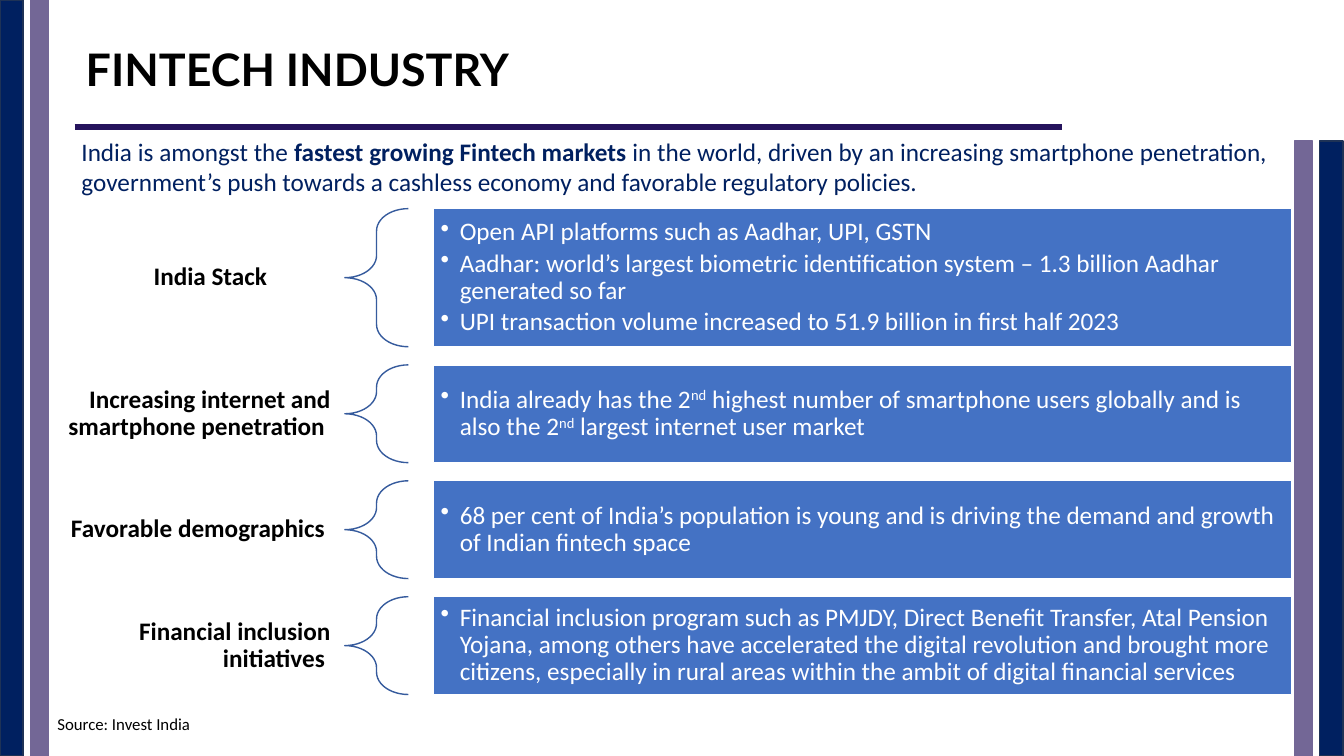
from dataclasses import dataclass

from lxml import etree
from pptx import Presentation
from pptx.dml.color import RGBColor
from pptx.enum.shapes import MSO_CONNECTOR, MSO_SHAPE
from pptx.enum.text import MSO_ANCHOR, PP_ALIGN
from pptx.oxml.ns import qn
from pptx.shapes.base import BaseShape
from pptx.slide import Slide
from pptx.text.text import TextFrame, _Paragraph
from pptx.util import Pt

RECTANGLE = MSO_SHAPE.RECTANGLE
LEFT_BRACE = MSO_SHAPE.LEFT_BRACE
STRAIGHT = MSO_CONNECTOR.STRAIGHT
LEFT, RIGHT, JUSTIFY = PP_ALIGN.LEFT, PP_ALIGN.RIGHT, PP_ALIGN.JUSTIFY
TOP, MIDDLE = MSO_ANCHOR.TOP, MSO_ANCHOR.MIDDLE

EMU_PER_PX = 9144
COLORS = {
    "navy": "002060",
    "navy_edge": "1E3256",
    "purple": "736796",
    "rule": "26145D",
    "panel": "4472C4",
    "brace": "365B9D",
    "white": "FFFFFF",
    "black": "000000",
}
FIRST_ROW_TOP = 207
ROW_GAP = 18
LABEL_HEIGHT = 97


@dataclass(frozen=True)
class Span:
    text: str
    bold: bool = False
    superscript: bool = False


@dataclass(frozen=True)
class Bar:
    left: int
    top: int
    width: int
    height: int
    fill: str
    edge: str


@dataclass(frozen=True)
class Driver:
    label: str
    bullets: list[list[Span]]
    height: int = 97
    label_inset: int = 14


BARS = [
    Bar(0, 0, 23, 750, "navy", "navy_edge"),
    Bar(30, 0, 18, 750, "purple", "purple"),
    Bar(1309, 140, 23, 610, "navy", "navy_edge"),
    Bar(1284, 140, 18, 610, "purple", "purple"),
]
INTRO = [
    Span("India is amongst the "),
    Span("fastest growing Fintech markets ", bold=True),
    Span("in the world, driven by an increasing smartphone penetration, "
         "government’s push towards a cashless economy and favorable regulatory policies."),
]
DRIVERS = [
    Driver("India Stack", [
        [Span("Open API platforms such as Aadhar, UPI, GSTN")],
        [Span("Aadhar: world’s largest biometric identification system – "
              "1.3 billion Aadhar generated so far")],
        [Span("UPI transaction volume increased to 51.9 billion in first half 2023")],
    ], height=137, label_inset=77),
    Driver("Increasing internet and smartphone penetration ", [[
        Span("India already has the 2"),
        Span("nd", superscript=True),
        Span(" highest number of smartphone users globally and is also the 2"),
        Span("nd", superscript=True),
        Span(" largest internet user market"),
    ]]),
    Driver("Favorable demographics ", [
        [Span("68 per cent of India’s population is young and is driving "
              "the demand and growth of Indian fintech space")],
    ]),
    Driver("Financial inclusion initiatives ", [
        [Span("Financial inclusion program such as PMJDY, Direct Benefit Transfer, "
              "Atal Pension Yojana, among others have accelerated the digital revolution "
              "and brought more citizens, especially in rural areas within the ambit of "
              "digital financial services")],
    ]),
]


def px(length: int) -> int:
    return length * EMU_PER_PX


def rgb(name: str) -> RGBColor:
    return RGBColor.from_string(COLORS[name])


def set_frame(frame: TextFrame, anchor: MSO_ANCHOR,
              insets: tuple[int, int, int, int] = (10, 5, 10, 5)) -> None:
    frame.word_wrap = True
    frame.vertical_anchor = anchor
    frame.margin_left, frame.margin_top, frame.margin_right, frame.margin_bottom = map(px, insets)


def write(para: _Paragraph, spans: list[Span], size: int, color: str,
          align: PP_ALIGN = LEFT, font: str = "Calibri", spacing: float = 1.0) -> None:
    para.alignment = align
    para.line_spacing = spacing
    for item in spans:
        span = para.add_run()
        span.text = item.text
        span.font.name = font
        span.font.size = Pt(size)
        span.font.bold = item.bold
        span.font.color.rgb = rgb(color)
        if item.superscript:
            span._r.get_or_add_rPr().set("baseline", "30000")


def add_bullet(para: _Paragraph, indent: int) -> None:
    properties = para._p.get_or_add_pPr()
    properties.set("marL", str(px(indent)))
    properties.set("indent", str(-px(indent)))
    etree.SubElement(properties, qn("a:buChar")).set("char", "•")


def add_box(page: Slide, left: int, top: int, width: int, height: int) -> TextFrame:
    return page.shapes.add_textbox(px(left), px(top), px(width), px(height)).text_frame


def add_outlined(page: Slide, kind: MSO_SHAPE, left: int, top: int, width: int,
                 height: int, edge: str, fill: str = "") -> BaseShape:
    shape = page.shapes.add_shape(kind, px(left), px(top), px(width), px(height))
    shape.shadow.inherit = False
    shape.line.color.rgb = rgb(edge)
    shape.line.width = Pt(1)
    if fill:
        shape.fill.solid()
        shape.fill.fore_color.rgb = rgb(fill)
    else:
        shape.fill.background()
    return shape


def add_title(page: Slide) -> None:
    title = page.shapes.title
    title.left, title.top, title.width, title.height = map(px, (74, 21, 993, 95))
    set_frame(title.text_frame, MIDDLE, (11, 0, 0, 0))
    write(title.text_frame.paragraphs[0], [Span("FINTECH INDUSTRY", bold=True)],
          32, "black", font="Lato")
    rule = page.shapes.add_connector(STRAIGHT, px(74), px(126), px(1053), px(126))
    rule.line.color.rgb = rgb("rule")
    rule.line.width = Pt(4.5)
    etree.SubElement(rule._element.spPr, qn("a:effectLst"))


def add_driver(page: Slide, driver: Driver, top: int) -> None:
    label_top = top + (driver.height - LABEL_HEIGHT) // 2
    label = add_box(page, 29, label_top, 313, LABEL_HEIGHT)
    set_frame(label, MIDDLE, (14, 5, driver.label_inset, 5))
    write(label.paragraphs[0], [Span(driver.label, bold=True)], 18, "black", RIGHT, spacing=0.9)

    brace = add_outlined(page, LEFT_BRACE, 342, top, 63, driver.height, "brace")
    brace.adjustments[0] = 0.35
    brace.adjustments[1] = 0.5

    panel = add_outlined(page, RECTANGLE, 430, top, 851, driver.height, "white", "panel")
    frame = panel.text_frame
    set_frame(frame, MIDDLE, (7, 7, 7, 7))
    for index, spans in enumerate(driver.bullets):
        para = frame.add_paragraph() if index else frame.paragraphs[0]
        para.space_after = Pt(3)
        add_bullet(para, 19)
        write(para, spans, 18, "white", spacing=0.9)


def main() -> None:
    deck = Presentation()
    deck.slide_width, deck.slide_height = px(1333), px(750)
    page = deck.slides.add_slide(deck.slide_layouts.get_by_name("Title Only"))

    for bar in BARS:
        add_outlined(page, RECTANGLE, bar.left, bar.top, bar.width, bar.height, bar.edge, bar.fill)
    add_title(page)

    intro = add_box(page, 71, 130, 1196, 71)
    set_frame(intro, TOP)
    write(intro.paragraphs[0], INTRO, 18, "navy", JUSTIFY)

    top = FIRST_ROW_TOP
    for driver in DRIVERS:
        add_driver(page, driver, top)
        top += driver.height + ROW_GAP

    source = add_box(page, 47, 703, 518, 30)
    set_frame(source, TOP)
    write(source.paragraphs[0], [Span("Source: Invest India")], 12, "black")

    deck.save("out.pptx")


if __name__ == "__main__":
    main()
